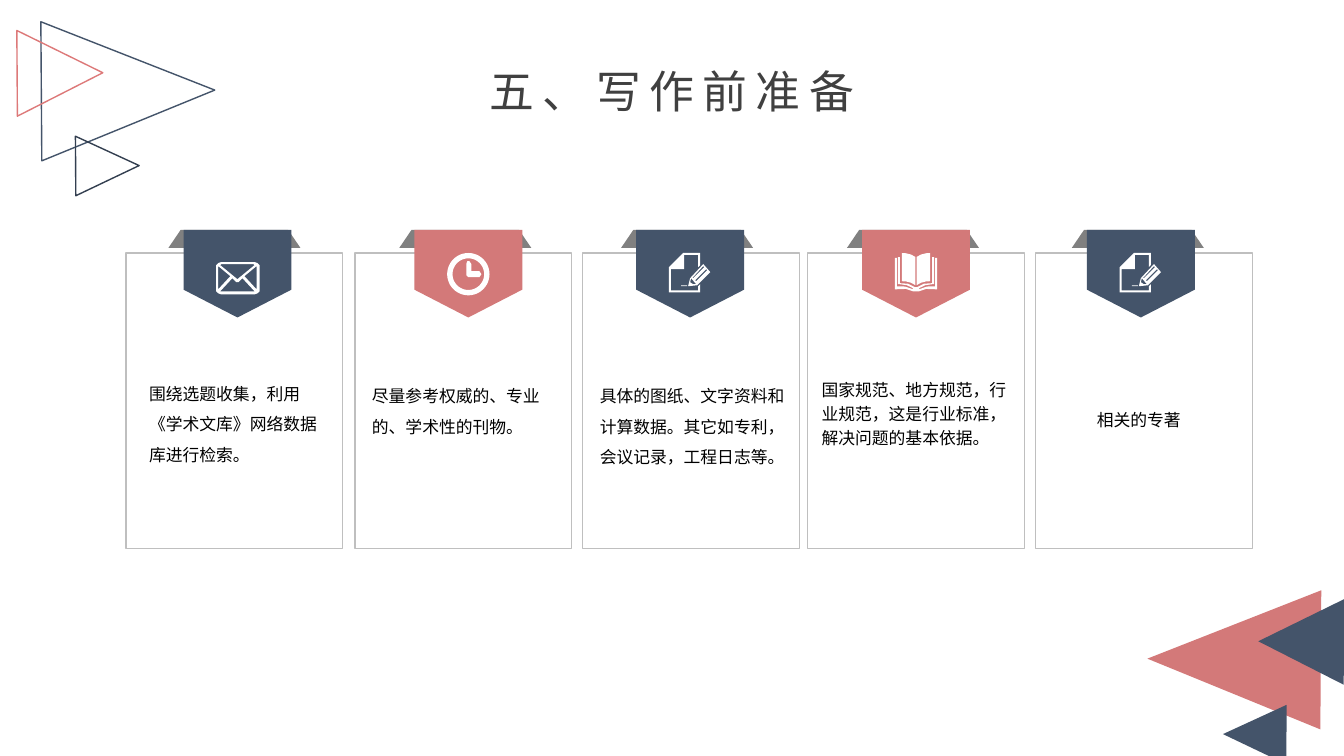
"""Build a slide with five ribboned cards on what to prepare before writing."""
from math import cos, sin, pi
from pptx import Presentation
from pptx import util as u
from pptx.dml.color import RGBColor
from pptx.enum import shapes, text
from pptx.oxml import parse_xml
from pptx.oxml.ns import nsdecls

COLS, ROWS = 1333, 750
HUES = {"navy": "44546A", "rose": "D37979", "pink": "DD7979", "ink": "333F50",
        "edge": "BFBFBF", "fold": "808080", "white": "FFFFFF",
        "black": "000000", "title": "404040"}
SANS = "Noto Sans CJK JP"
TITLE = "五、写作前准备"

# card column, ribbon column, hue, icon, icon row, text, text box, line spacing
CARDS = [
    (125, 167, "navy", "mail", 260, "围绕选题收集，利用《学术文库》网络数据库进行检索。",
     (138, 366, 201, 101), 1.5),
    (352, 396, "rose", "clock", 251, "尽量参考权威的、专业的、学术性的刊物。",
     (359, 368, 201, 58), 1.5),
    (578, 616, "navy", "pen", 251, "具体的图纸、文字资料和计算数据。其它如专利，会议记录，工程日志等。",
     (585, 368, 208, 101), 1.5),
    (801, 840, "rose", "book", 251, "国家规范、地方规范，行业规范，这是行业标准，解决问题的基本依据。",
     (805, 368, 208, 83), 1.2),
    (1027, 1063, "navy", "pen", 251, "相关的专著", (1078, 392, 121, 34), 1.5),
]

# box, turn, fill, line
TRIOS = [
    ((1155, 568, 138, 172), 270.4, "rose", None),
    ((1215, 697, 59, 63), 270.4, "navy", None),
    ((1248, 594, 85, 85), 270.4, "navy", None),
    ((58, 4, 138, 172), 89.6, None, "navy"),
    ((77, 133, 59, 63), 89.6, None, "ink"),
    ((17, 30, 85, 85), 89.6, None, "pink"),
]


def ring(rad, steps=48):
    return [(21 + rad * cos(2 * pi * i / steps), 21 + rad * sin(2 * pi * i / steps))
            for i in range(steps)]


def flip(pts, wide):
    return [(wide - x, y) for x, y in reversed(pts)]


LID = [(5, 32), (2, 31), (0, 29), (0, 27), (0, 5), (0, 3), (2, 1), (5, 0)]
FLAP = [(2, 27), (2, 4), (14, 14)]
PAGE = [(20.5, 32), (16, 29.5), (11, 28.2), (7, 28), (7, 0), (11, 0.3), (16, 1.5),
        (20.5, 4)]
COVER = [(18, 38), (11, 35.7), (2, 36), (0, 36), (0, 5), (2, 5), (2, 33), (10, 33.3),
         (18, 36), (18, 35), (12, 32), (5, 31), (3, 31), (3, 4), (5, 4), (5, 30),
         (13, 30.5), (20, 34)]
ICONS = {
    "mail": [LID + flip(LID, 43), FLAP, flip(FLAP, 42),
             [(37, 2), (38, 3), (21, 17), (4, 3), (5, 2)],
             [(5, 29), (4, 29), (16, 16), (20, 20), (22, 20), (26, 16), (38, 29), (37, 29)]],
    "clock": [ring(21), ring(15.7),
              [(34, 21), (32, 24), (21, 24), (19, 22), (19, 11), (20, 8), (22, 8),
               (24, 11), (24, 18), (32, 18)]],
    "book": [PAGE, flip(PAGE, 42), COVER + flip(COVER, 42)],
    "pen": [[(12, 32), (18, 32), (18, 33), (12, 33)],
            [(28, 32), (19, 33), (21, 25), (34, 11), (41, 19)],
            [(27, 28), (38, 17), (37, 16), (26, 27)],
            [(27, 31), (24, 31), (21, 29), (22, 25)],
            [(24, 25), (35, 14), (34, 13), (23, 25)],
            [(0, 39), (31, 39), (31, 31), (29, 33), (29, 37), (2, 37), (2, 16), (15, 16),
             (15, 2), (29, 2), (29, 14), (31, 12), (31, 0), (14, 0), (0, 14)]],
}

deck = Presentation()
deck.slide_width, deck.slide_height = u.Inches(13.33), u.Inches(7.5)
slide = deck.slides.add_slide(deck.slide_layouts[6])
cell_w, cell_h = deck.slide_width / COLS, deck.slide_height / ROWS


def place(x, y):
    return u.Emu(round(x * cell_w)), u.Emu(round(y * cell_h))


def paint(shape, fill=None, line=None):
    shape.shadow.inherit = False
    if fill:
        shape.fill.solid()
        shape.fill.fore_color.rgb = RGBColor.from_string(HUES[fill])
    else:
        shape.fill.background()
    if line:
        shape.line.color.rgb = RGBColor.from_string(HUES[line])
        shape.line.width = u.Pt(1)
    else:
        shape.line.fill.background()


def block(kind, box, fill=None, line=None, turn=0, adj=None):
    shape = slide.shapes.add_shape(kind, *place(*box[:2]), *place(*box[2:]))
    shape.rotation = turn
    if adj is not None:
        shape.adjustments[0] = adj
    paint(shape, fill, line)


def draw(loops, x, y):
    pen = None
    for loop in loops:
        pts = [place(x + a, y + b) for a, b in loop]
        if pen is None:
            pen = slide.shapes.build_freeform(*pts[0], scale=1.0)
        else:
            pen.move_to(*pts[0])
        pen.add_line_segments(pts[1:], close=True)
    paint(pen.convert_to_shape(), "white")


def write(words, box, size=12, font="Arial", hue="black", lead=None, gap=None,
          align=None, anchor=None, inset=None):
    shape = slide.shapes.add_textbox(*place(*box[:2]), *place(*box[2:]))
    frame = shape.text_frame
    frame.word_wrap = True
    frame.auto_size = text.MSO_AUTO_SIZE.SHAPE_TO_FIT_TEXT
    if anchor is not None:
        frame.vertical_anchor = anchor
    if inset is not None:
        frame.margin_left = frame.margin_right = inset
        frame.margin_top = frame.margin_bottom = inset
    para = frame.paragraphs[0]
    para.alignment, para.line_spacing = align, lead
    run = para.add_run()
    run.text = words
    run.font.size, run.font.name = u.Pt(size), font
    run.font.color.rgb = RGBColor.from_string(HUES[hue])
    props = run.font._element
    props.set("lang", "zh-CN")
    if gap:
        props.set("spc", str(gap * 100))
    props.find("{*}latin").addnext(
        parse_xml(f'<a:ea {nsdecls("a")} typeface="{font}"/>'))


KIND = shapes.MSO_SHAPE
for left, tab, hue, icon, row, words, box, lead in CARDS:
    block(KIND.RECTANGLE, (left, 251, 215, 293), line="edge")
    block(KIND.TRAPEZOID, (tab, 228, 131, 18), "fold", adj=0.679)
    block(KIND.PENTAGON, (tab + 25, 218, 87, 107), hue, turn=90, adj=0.317)
    draw(ICONS[icon], tab + 47.5, row)
    write(words, box, lead=lead)

for box, turn, fill, line in TRIOS:
    block(KIND.ISOSCELES_TRIANGLE, box, fill, line, turn)

write(TITLE, (401, 70, 531, 40), size=32, font=SANS, hue="title", gap=6,
      align=text.PP_ALIGN.CENTER, anchor=text.MSO_ANCHOR.MIDDLE, inset=0)

deck.save("out.pptx")
